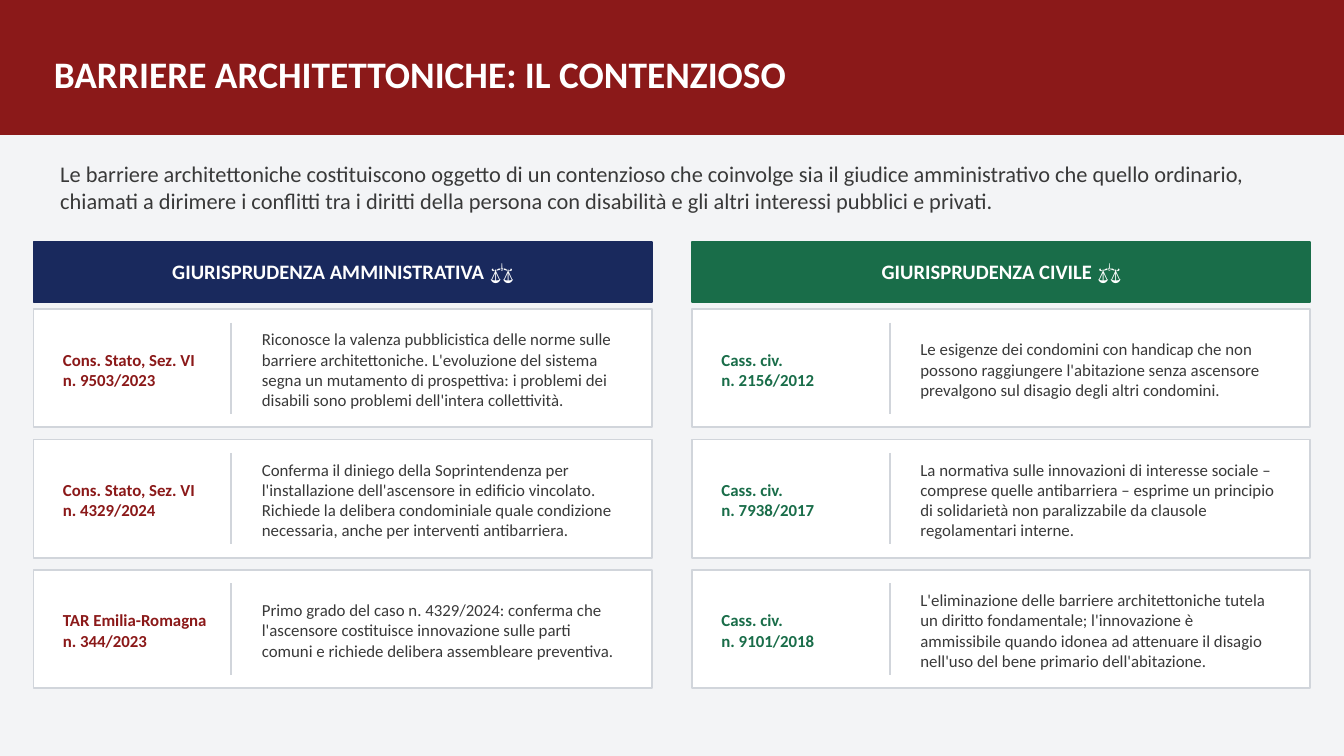
from lxml.etree import SubElement
from pptx import Presentation
from pptx.dml.color import RGBColor
from pptx.enum.shapes import MSO_CONNECTOR, MSO_SHAPE
from pptx.enum.text import MSO_ANCHOR, MSO_AUTO_SIZE, PP_ALIGN
from pptx.oxml.ns import qn
from pptx.util import Inches, Pt

HEX = {"page": "F3F4F6", "red": "8B1919", "navy": "19295D", "green": "196D49",
       "white": "FFFFFF", "rule": "D1D5DB", "ink": "393939"}

INTRO = ("Le barriere architettoniche costituiscono oggetto di un contenzioso che "
         "coinvolge sia il giudice amministrativo che quello ordinario, chiamati a "
         "dirimere i conflitti tra i diritti della persona con disabilità e gli altri "
         "interessi pubblici e privati.")

# Each case: court, number, summary, lines the summary takes
ADMIN = [
    ("Cons. Stato, Sez. VI", "n. 9503/2023",
     "Riconosce la valenza pubblicistica delle norme sulle barriere architettoniche. "
     "L'evoluzione del sistema segna un mutamento di prospettiva: i problemi dei "
     "disabili sono problemi dell'intera collettività.", 4),
    ("Cons. Stato, Sez. VI", "n. 4329/2024",
     "Conferma il diniego della Soprintendenza per l'installazione dell'ascensore in "
     "edificio vincolato. Richiede la delibera condominiale quale condizione "
     "necessaria, anche per interventi antibarriera.", 4),
    ("TAR Emilia-Romagna", "n. 344/2023",
     "Primo grado del caso n. 4329/2024: conferma che l'ascensore costituisce "
     "innovazione sulle parti comuni e richiede delibera assembleare preventiva.", 3),
]
CIVIL = [
    ("Cass. civ.", "n. 2156/2012",
     "Le esigenze dei condomini con handicap che non possono raggiungere l'abitazione "
     "senza ascensore prevalgono sul disagio degli altri condomini.", 3),
    ("Cass. civ.", "n. 7938/2017",
     "La normativa sulle innovazioni di interesse sociale – comprese quelle "
     "antibarriera – esprime un principio di solidarietà non paralizzabile da "
     "clausole regolamentari interne.", 4),
    ("Cass. civ.", "n. 9101/2018",
     "L'eliminazione delle barriere architettoniche tutela un diritto fondamentale; "
     "l'innovazione è ammissibile quando idonea ad attenuare il disagio nell'uso del "
     "bene primario dell'abitazione.", 4),
]


def color(name):
    return RGBColor.from_string(HEX[name])


def place(shape, x, y, w, h):
    shape.left, shape.top = Inches(x), Inches(y)
    shape.width, shape.height = Inches(w), Inches(h)


def write(shape, lines, size, tint, bold=False, align=PP_ALIGN.LEFT):
    frame = shape.text_frame
    frame.word_wrap = True
    frame.auto_size = MSO_AUTO_SIZE.NONE
    frame.vertical_anchor = MSO_ANCHOR.TOP
    for i, line in enumerate(lines):
        para = frame.add_paragraph() if i else frame.paragraphs[0]
        para.alignment = align
        run = para.add_run()
        run.text = line
        font = run.font
        font.name, font.size, font.bold = "Calibri", Pt(size), bold
        font.color.rgb = color(tint)


def label(slide, x, y, w, h, *style, **more):
    box = slide.shapes.add_textbox(Inches(x), Inches(y), Inches(w), Inches(h))
    write(box, *style, **more)
    return box


def panel(slide, x, y, w, h, fill, edge):
    box = slide.shapes.add_shape(MSO_SHAPE.RECTANGLE, Inches(x), Inches(y),
                                 Inches(w), Inches(h))
    box.shadow.inherit = False
    box.fill.solid()
    box.fill.fore_color.rgb = color(fill)
    box.line.color.rgb = color(edge)
    box.line.width = Pt(1)
    return box


def header(slide, x, y, w, h):
    band = panel(slide, x, y, w, h, "red", "red")
    title = slide.shapes.title
    band._element.addnext(title._element)  # title in front of the band
    place(title, x + 0.3, y + 0.33, w - 0.6, 0.38)
    write(title, ["BARRIERE ARCHITETTONICHE: IL CONTENZIOSO"], 20, "white", bold=True)


def card(slide, x, y, w, h, case, tint):
    court, number, summary, rows = case
    panel(slide, x, y, w, h, "white", "rule")
    mid = y + h / 2

    # Court and number
    label(slide, x + 0.12, mid - 0.19, 1.3, 0.38, [court, number], 9, tint, bold=True)

    # Divider
    rule = slide.shapes.add_connector(MSO_CONNECTOR.STRAIGHT, Inches(x + 1.47),
                                      Inches(y + 0.1), Inches(x + 1.47),
                                      Inches(y + h - 0.1))
    rule.line.color.rgb = color("rule")
    rule.line.width = Pt(1)
    SubElement(rule._element.spPr, qn("a:effectLst"))

    # Summary
    tall = 0.08 + 0.15 * rows
    label(slide, x + 1.6, mid - tall / 2, w - 1.75, tall, [summary], 9, "ink")


def column(slide, x, y, w, head, cases, fill, tint):
    panel(slide, x, y, w, 0.45, fill, fill)
    name = label(slide, x + 0.1, y + 0.08, w - 0.2, 0.28, [head], 11, "white",
                 bold=True, align=PP_ALIGN.CENTER)
    # Right-to-left order puts the scales after the words
    name.text_frame.paragraphs[0]._p.get_or_add_pPr().set("rtl", "1")
    for i, case in enumerate(cases):
        card(slide, x, y + 0.5 + 0.97 * i, w, 0.88, case, tint)


def main():
    deck = Presentation()
    deck.slide_width = Inches(10)
    deck.slide_height = deck.slide_width * 9 // 16
    slide = deck.slides.add_slide(deck.slide_layouts[5])
    slide.background.fill.solid()
    slide.background.fill.fore_color.rgb = color("page")

    header(slide, 0, 0, 10, 1)
    label(slide, 0.35, 1.14, 9.3, 0.48, [INTRO], 12, "ink")
    column(slide, 0.25, 1.8, 4.6, "⚖ GIURISPRUDENZA AMMINISTRATIVA", ADMIN,
           "navy", "red")
    column(slide, 5.15, 1.8, 4.6, "⚖ GIURISPRUDENZA CIVILE", CIVIL,
           "green", "green")
    deck.save("out.pptx")


if __name__ == "__main__":
    main()
